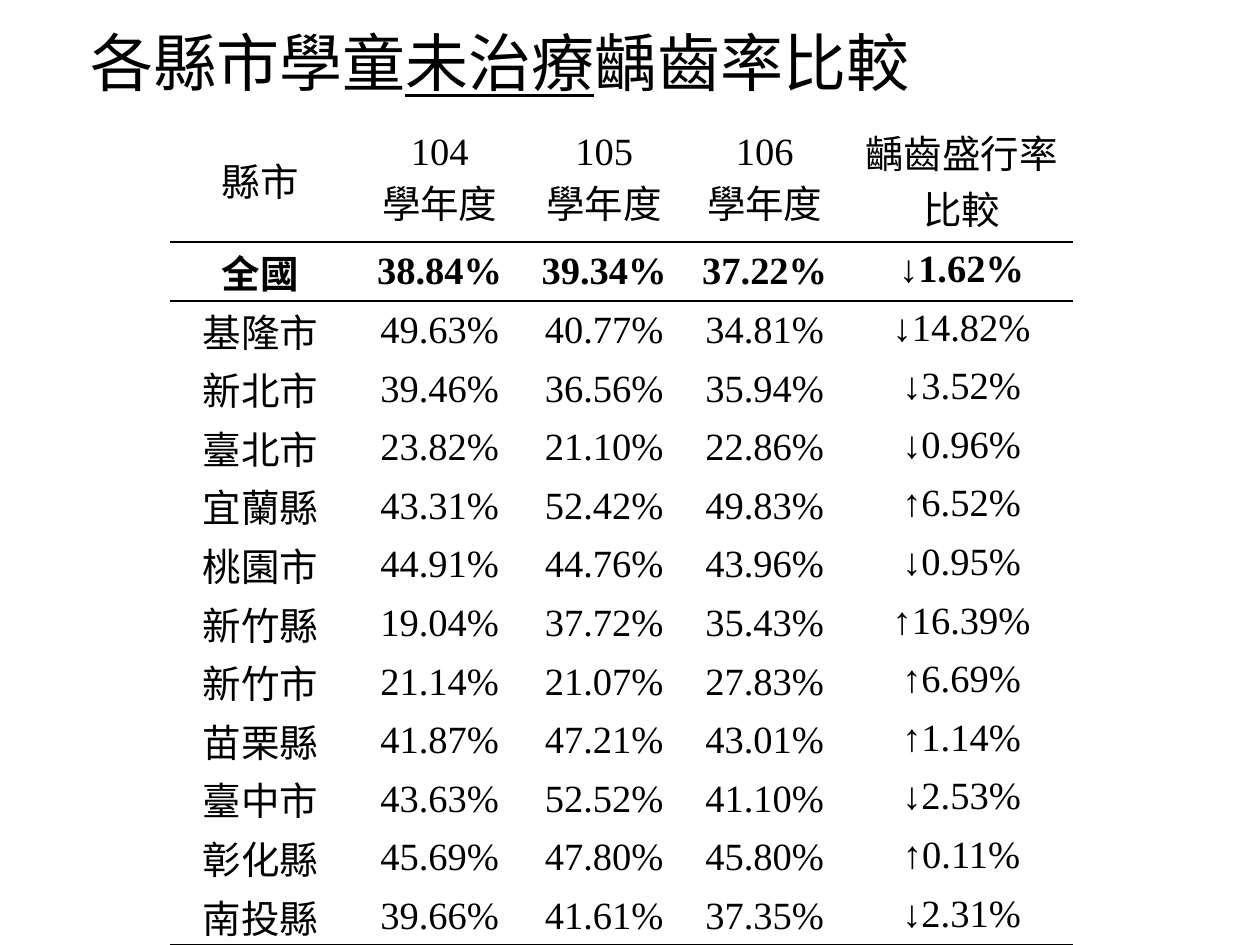
from dataclasses import dataclass

from lxml import etree
from pptx import Presentation
from pptx import util as u
from pptx.dml import color
from pptx.enum import text
from pptx.oxml import ns

BLACK = color.RGBColor(0, 0, 0)
WHITE = color.RGBColor(255, 255, 255)
CJK_FONT = "Noto Sans CJK SC"
LATIN_FONT = "Times New Roman"
NO_STYLE_NO_GRID = "{2D5ABB26-0587-4C30-8999-92F81FD0307C}"
COLUMN_WIDTHS = (103.5, 101.5, 86.5, 97, 128)
HEADER_HEIGHT, ROW_HEIGHT = 60, 33.5


@dataclass(frozen=True)
class County:
    name: str
    rates: tuple[float, float, float]

    def cell_texts(self) -> list[str]:
        change = self.rates[-1] - self.rates[0]
        arrow = "↑" if change > 0 else "↓"
        return [self.name, *(f"{rate:.2f}%" for rate in self.rates),
                f"{arrow}{abs(change):.2f}%"]


HEADERS = ["縣市", "104\n學年度", "105\n學年度", "106\n學年度", "齲齒盛行率\n比較"]
COUNTIES = [
    County("全國", (38.84, 39.34, 37.22)),
    County("基隆市", (49.63, 40.77, 34.81)),
    County("新北市", (39.46, 36.56, 35.94)),
    County("臺北市", (23.82, 21.10, 22.86)),
    County("宜蘭縣", (43.31, 52.42, 49.83)),
    County("桃園市", (44.91, 44.76, 43.96)),
    County("新竹縣", (19.04, 37.72, 35.43)),
    County("新竹市", (21.14, 21.07, 27.83)),
    County("苗栗縣", (41.87, 47.21, 43.01)),
    County("臺中市", (43.63, 52.52, 41.10)),
    County("彰化縣", (45.69, 47.80, 45.80)),
    County("南投縣", (39.66, 41.61, 37.35)),
]


def format_span(span, size: float, latin: str) -> None:
    span.font.size = u.Pt(size)
    span.font.name = latin
    span.font.color.rgb = BLACK
    east_asian = etree.Element(ns.qn("a:ea"), typeface=CJK_FONT)
    span.font._element.find(ns.qn("a:latin")).addnext(east_asian)


def add_border(cell, side: str) -> None:
    line = etree.Element(ns.qn(f"a:ln{side}"), w=str(u.Pt(1.5)))
    fill = etree.SubElement(line, ns.qn("a:solidFill"))
    etree.SubElement(fill, ns.qn("a:srgbClr"), val=str(BLACK))
    cell._tc.get_or_add_tcPr().insert(0, line)


def fill_cell(cell, content: str, bold: bool, tight: bool, middle: bool) -> None:
    cell.fill.solid()
    cell.fill.fore_color.rgb = WHITE
    if middle:
        cell.vertical_anchor = text.MSO_ANCHOR.MIDDLE
    if tight:
        cell.margin_left = cell.margin_right = cell.margin_top = u.Pt(0.72)
        cell.margin_bottom = u.Pt(0)
    cell.text_frame.text = content
    for para in cell.text_frame.paragraphs:
        para.alignment = text.PP_ALIGN.CENTER
        for span in para.runs:
            format_span(span, 22, LATIN_FONT)
            span.font.bold = bold


def add_title(page) -> None:
    box = page.shapes.title
    box.left, box.top, box.width, box.height = map(u.Pt, (44.5, 0, 620.5, 75))
    box.text_frame.vertical_anchor = text.MSO_ANCHOR.MIDDLE
    para = box.text_frame.paragraphs[0]
    para.alignment = text.PP_ALIGN.LEFT
    para.line_spacing = 0.9
    for words, underlined in (("各縣市學童", False), ("未治療", True),
                              ("齲齒率比較", False)):
        span = para.add_run()
        span.text = words
        format_span(span, 36, CJK_FONT)
        span.font.underline = underlined


def add_rate_table(page) -> None:
    rows = [HEADERS] + [county.cell_texts() for county in COUNTIES]
    last_row, last_column = len(rows) - 1, len(HEADERS) - 1
    frame = page.shapes.add_table(
        len(rows), len(HEADERS), u.Pt(97), u.Pt(67.5), u.Pt(sum(COLUMN_WIDTHS)),
        u.Pt(HEADER_HEIGHT + ROW_HEIGHT * last_row))
    table = frame.table
    table.first_row = table.horz_banding = False
    table._tbl.tblPr.find(ns.qn("a:tableStyleId")).text = NO_STYLE_NO_GRID
    for column, width in zip(table.columns, COLUMN_WIDTHS):
        column.width = u.Pt(width)

    for i, contents in enumerate(rows):
        table.rows[i].height = u.Pt(ROW_HEIGHT if i else HEADER_HEIGHT)
        for j, content in enumerate(contents):
            cell = table.cell(i, j)
            middle = j < last_column
            fill_cell(cell, content, bold=i == 1, tight=i > 0 and middle,
                      middle=middle)
            # Rules below the header and below the last county
            if i in (0, last_row):
                add_border(cell, "B")
            elif i == 1:
                add_border(cell, "T")


def main() -> None:
    deck = Presentation()
    deck.slide_width, deck.slide_height = u.Pt(720), u.Pt(540)
    page = deck.slides.add_slide(deck.slide_layouts[5])
    add_title(page)
    add_rate_table(page)
    deck.save("out.pptx")


if __name__ == "__main__":
    main()
